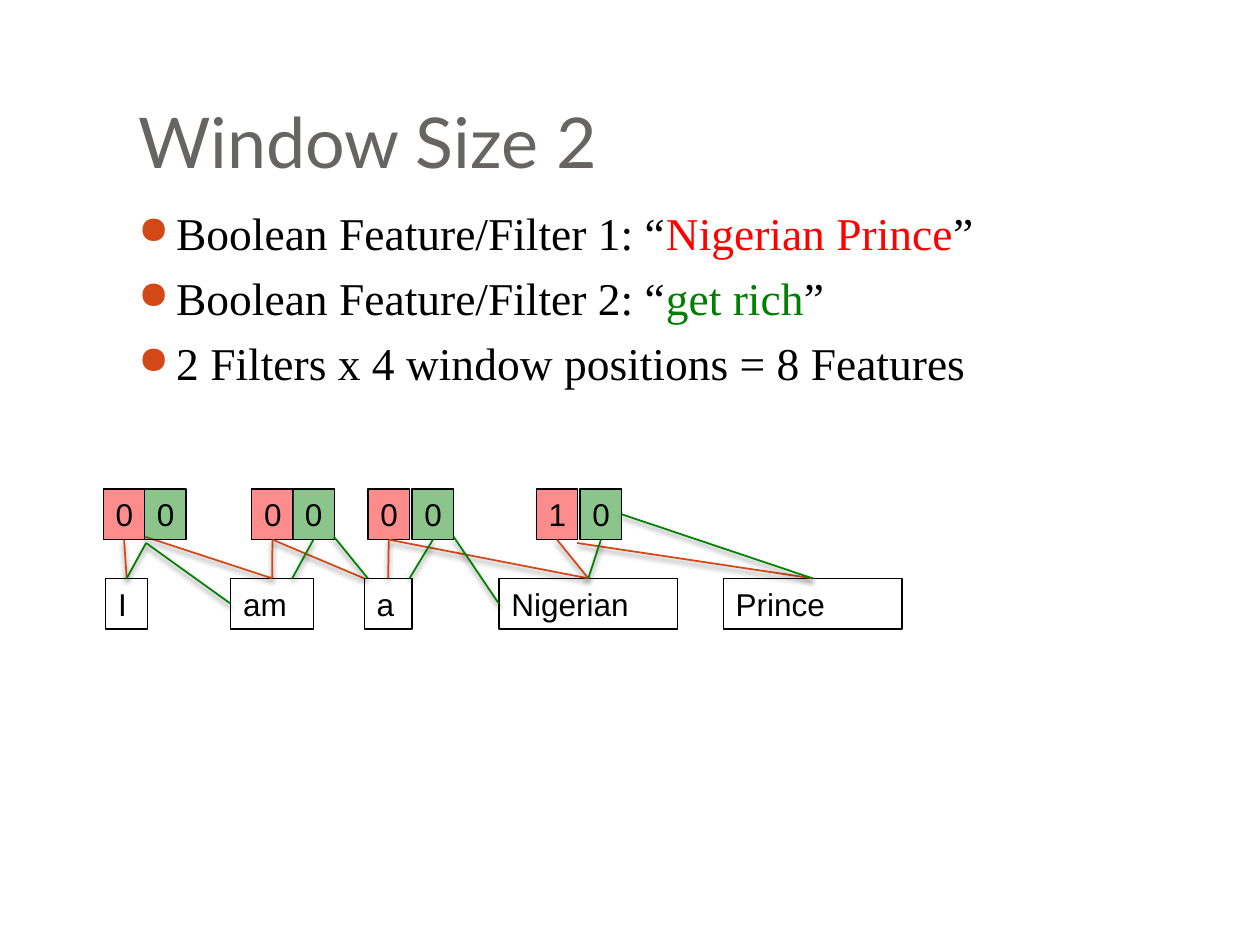
from dataclasses import dataclass

from lxml.etree import SubElement as Sub
from pptx import Presentation
from pptx.dml.color import RGBColor as Rgb
from pptx.enum.shapes import MSO_CONNECTOR as Conn, MSO_SHAPE as Kind
from pptx.enum.text import MSO_ANCHOR as Anchor, PP_ALIGN as Align
from pptx.oxml.ns import qn
from pptx.util import Pt


@dataclass(frozen=True)
class Theme:
    title: str = "696464"
    ink: str = "000000"
    rust: str = "D34817"
    red: str = "FF0000"
    green: str = "008000"
    head: str = "Lato"
    serif: str = "Times New Roman"
    sans: str = "Arial"
    big: float = 40
    mid: float = 26
    small: float = 18


TOP, LEFT, BOTTOM, RIGHT = range(4)


def write(para, text, font, size, color):
    run = para.add_run()
    run.text = text
    run.font.name = font
    run.font.size = Pt(size)
    run.font.color.rgb = Rgb.from_string(color)


class Page:
    def __init__(self, deck, theme):
        self.theme = theme
        self.shapes = deck.slides.add_slide(deck.slide_layouts[6]).shapes

    def text(self, x, y, w, h, anchor=Anchor.TOP, foot=3.6):
        frame = self.shapes.add_textbox(Pt(x), Pt(y), Pt(w), Pt(h)).text_frame
        frame.word_wrap = True
        frame.vertical_anchor = anchor
        frame.margin_bottom = Pt(foot)
        return frame

    def bullet(self, para, parts):
        t = self.theme
        para.space_before = Pt(5.8)
        props = para._p.get_or_add_pPr()
        props.set("marL", str(Pt(21.6)))
        props.set("indent", str(-Pt(21.6)))
        Sub(Sub(props, qn("a:buClr")), qn("a:srgbClr"), val=t.rust)
        Sub(props, qn("a:buSzPct"), val="85000")
        Sub(props, qn("a:buChar"), char="●")
        for text, color in parts:
            write(para, text, font=t.serif, size=t.mid, color=color)

    def box(self, text, x, y, w, h=29, fill=None):
        t = self.theme
        box = self.shapes.add_shape(Kind.RECTANGLE, Pt(x), Pt(y), Pt(w), Pt(h))
        box.shadow.inherit = False
        box.line.color.rgb = Rgb.from_string(t.ink)
        box.line.width = Pt(0.75)
        if fill:
            box.fill.solid()
            box.fill.fore_color.rgb = Rgb.from_string(fill)
            tint = box._element.spPr.find(qn("a:solidFill"))[0]
            Sub(tint, qn("a:alpha"), val="45000")
        else:
            box.fill.background()
        frame = box.text_frame
        frame.word_wrap = True
        frame.vertical_anchor = Anchor.TOP
        para = frame.paragraphs[0]
        para.alignment = Align.LEFT
        write(para, text, font=t.sans, size=t.small, color=t.ink)
        return box

    def link(self, start, end, color):
        """Each end is an (x, y) point or a (box, side) pair."""
        glued = [not isinstance(spot[0], (int, float)) for spot in (start, end)]
        ends = [Pt(v) for spot, glue in zip((start, end), glued)
                for v in ((0, 0) if glue else spot)]
        line = self.shapes.add_connector(Conn.STRAIGHT, *ends)
        if glued[0]:
            line.begin_connect(*start)
        if glued[1]:
            line.end_connect(*end)
        line.line.color.rgb = Rgb.from_string(color)
        line.line.width = Pt(1)
        # Soft shadow straight below the line
        glow = Sub(Sub(line._element.spPr, qn("a:effectLst")), qn("a:outerShdw"),
                   blurRad=str(Pt(3)), dist=str(Pt(2)), dir="5400000",
                   rotWithShape="0")
        tint = Sub(glow, qn("a:srgbClr"), val=self.theme.ink)
        Sub(tint, qn("a:alpha"), val="50000")


def main():
    deck = Presentation()
    deck.slide_width, deck.slide_height = Pt(720), Pt(540)
    t = Theme()
    page = Page(deck, t)

    # Title
    title = page.text(72, 21.6, 612, 90, anchor=Anchor.BOTTOM, foot=7.2)
    write(title.paragraphs[0], "Window Size 2", font=t.head, size=t.big,
          color=t.title)

    # Bullets
    items = [
        [("Boolean Feature/Filter 1: “", t.ink), ("Nigerian Prince", t.red),
         ("”", t.ink)],
        [("Boolean Feature/Filter 2: “", t.ink), ("get rich", t.green),
         ("”", t.ink)],
        [("2 Filters x 4 window positions = 8 Features", t.ink)],
    ]
    body = page.text(72, 113.8, 612, 108.7)
    for i, parts in enumerate(items):
        page.bullet(body.add_paragraph() if i else body.paragraphs[0], parts)

    # Sentence, one box per word
    row, bits = 330.5, 279.4
    words = [("I", 60.5, 23.8), ("am", 131.8, 47.5), ("a", 208.1, 27.4),
             ("Nigerian", 285.1, 102.2), ("Prince", 413.3, 102.2)]
    one, am, a, land, prince = [page.box(s, x, row, w) for s, x, w in words]

    # Filter 1: a bit per window, tied to its two words
    r1, r2, r3, r4 = [page.box(bit, x, bits, 23.8, fill=t.red)
                      for bit, x in zip("0001", (59, 143.8, 210.3, 306.4))]
    for start, end in [
        ((one, TOP), (r1, BOTTOM)), ((am, TOP), (82.8, 306.7)),
        ((am, TOP), (r2, BOTTOM)), ((208.1, row), (r2, BOTTOM)),
        ((a, TOP), (r3, BOTTOM)), ((land, TOP), (r3, BOTTOM)),
        ((land, TOP), (r4, BOTTOM)), ((prince, TOP), (329.8, 310.3)),
    ]:
        page.link(start, end, t.rust)

    # Filter 2
    g1, g2, g3, g4 = [page.box("0", x, bits, 23.8, fill=t.green)
                      for x in (82.6, 167.2, 235.5, 331.5)]
    for start, end in [
        ((one, TOP), (83.5, 310.3)), ((am, LEFT), (83.5, 310.3)),
        ((167, row), (g2, BOTTOM)), ((210.2, row), (190.8, 306.7)),
        ((234, row), (g3, BOTTOM)), ((land, LEFT), (259.2, 306.7)),
        ((336.2, row), (g4, BOTTOM)), ((prince, TOP), (g4, RIGHT)),
    ]:
        page.link(start, end, t.green)

    deck.save("out.pptx")


if __name__ == "__main__":
    main()
